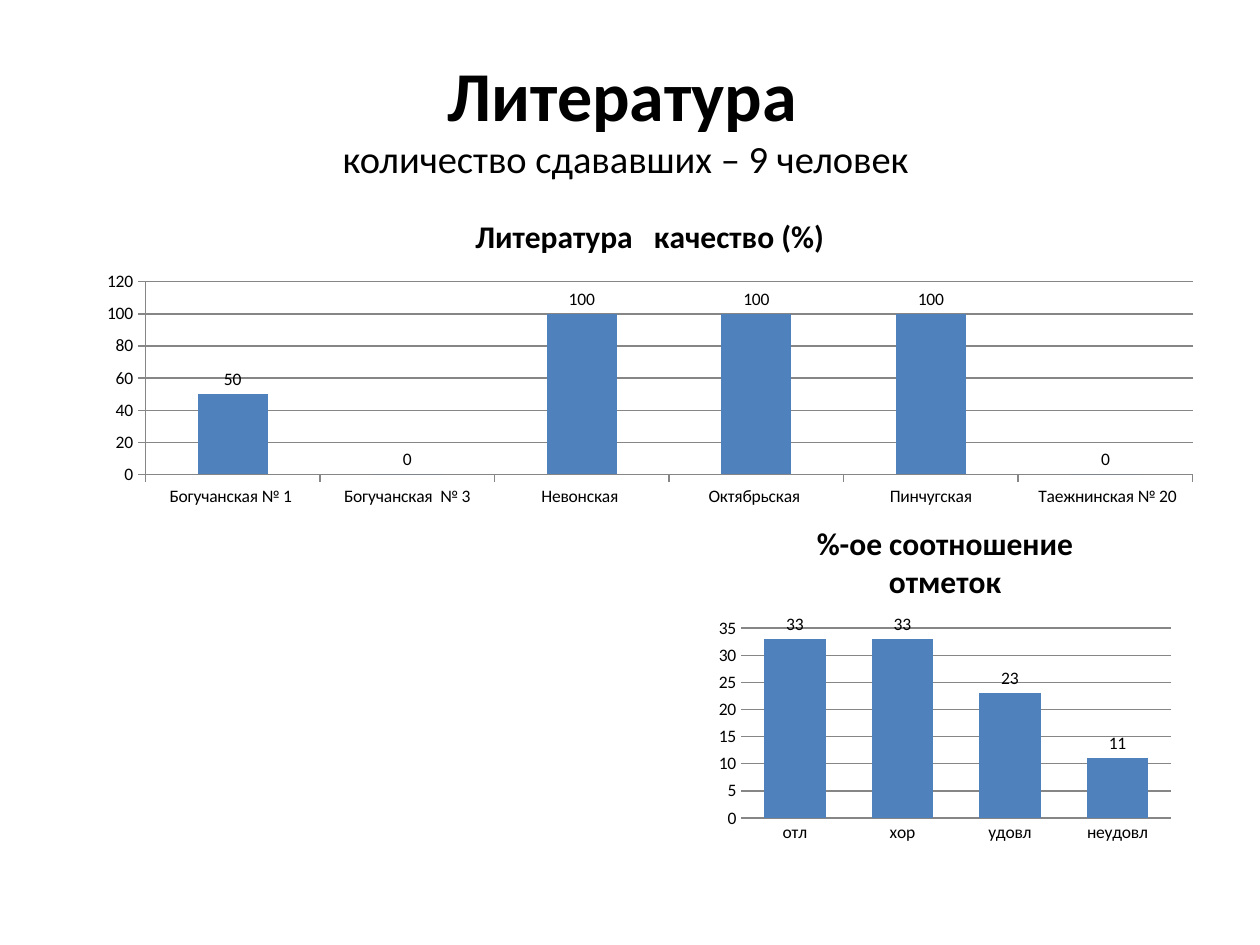
from pptx import Presentation
from pptx.chart.data import CategoryChartData
from pptx.dml.color import RGBColor
from pptx.enum.chart import XL_CHART_TYPE as ChartType, XL_LABEL_POSITION as LabelPos
from pptx.enum.chart import XL_TICK_MARK as Tick
from pptx.enum.text import MSO_ANCHOR, PP_ALIGN
from pptx.util import Cm, Pt

BLACK = RGBColor(0x00, 0x00, 0x00)
BLUE = RGBColor(0x4F, 0x81, 0xBD)
GRAY = RGBColor(0x86, 0x86, 0x86)
FONT = "Calibri"

QUALITY = {
    "Богучанская № 1 ": 50,
    "Богучанская  № 3": 0,
    "Невонская ": 100,
    "Октябрьская ": 100,
    "Пинчугская": 100,
    " Таежнинская № 20": 0,
}
GRADES = {"отл": 33, "хор": 33, "удовл": 23, "неудовл": 11}


def set_font(font, size, bold=False):
    font.name = FONT
    font.size = Pt(size)
    font.bold = bold
    font.color.rgb = BLACK


def add_heading(slide, title, subtitle):
    box = slide.shapes.add_textbox(Cm(1.27), Cm(0.76), Cm(22.86), Cm(3.18))
    tf = box.text_frame
    tf.word_wrap = True
    tf.vertical_anchor = MSO_ANCHOR.MIDDLE
    p = tf.paragraphs[0]
    p.alignment = PP_ALIGN.CENTER
    r = p.add_run()
    r.text = title
    set_font(r.font, 40, bold=True)
    p.add_line_break()
    r = p.add_run()
    r.text = subtitle
    set_font(r.font, 22)


def add_column_chart(slide, title, values, left, top, width, height,
                     gap=150, overlap=0, tick=Tick.OUTSIDE, value_line=True):
    data = CategoryChartData()
    data.categories = list(values)
    data.add_series("Series 1", list(values.values()))
    chart = slide.shapes.add_chart(
        ChartType.COLUMN_CLUSTERED, left, top, width, height, data).chart
    set_font(chart.font, 10)
    chart.has_legend = False
    chart.has_title = True
    p = chart.chart_title.text_frame.paragraphs[0]
    p.add_run().text = title
    set_font(p.font, 18, bold=True)
    chart.chart_title.include_in_layout = False

    for axis in (chart.category_axis, chart.value_axis):
        axis.major_tick_mark = tick
        axis.minor_tick_mark = Tick.NONE
        axis.format.line.color.rgb = GRAY
    if not value_line:
        chart.value_axis.format.line.fill.background()
    chart.value_axis.major_gridlines.format.line.color.rgb = GRAY

    plot = chart.plots[0]
    plot.gap_width = gap
    plot.overlap = overlap
    plot.vary_by_categories = False
    plot.has_data_labels = True
    plot.data_labels.show_value = True
    plot.data_labels.position = LabelPos.OUTSIDE_END
    fill = plot.series[0].format.fill
    fill.solid()
    fill.fore_color.rgb = BLUE


def main():
    prs = Presentation()
    prs.slide_width, prs.slide_height = Cm(25.4), Cm(19.05)
    s = prs.slides.add_slide(prs.slide_layouts[6])
    add_heading(s, "Литература ", "количество сдававших – 9 человек ")
    add_column_chart(s, "Литература   качество (%)", QUALITY,
                     Cm(1.7), Cm(3.94), Cm(22.8), Cm(6.4))
    add_column_chart(s, "%-ое соотношение отметок", GRADES,
                     Cm(14.3), Cm(10.13), Cm(9.5), Cm(7),
                     gap=75, overlap=-25, tick=Tick.NONE, value_line=False)
    prs.save("out.pptx")


if __name__ == "__main__":
    main()
